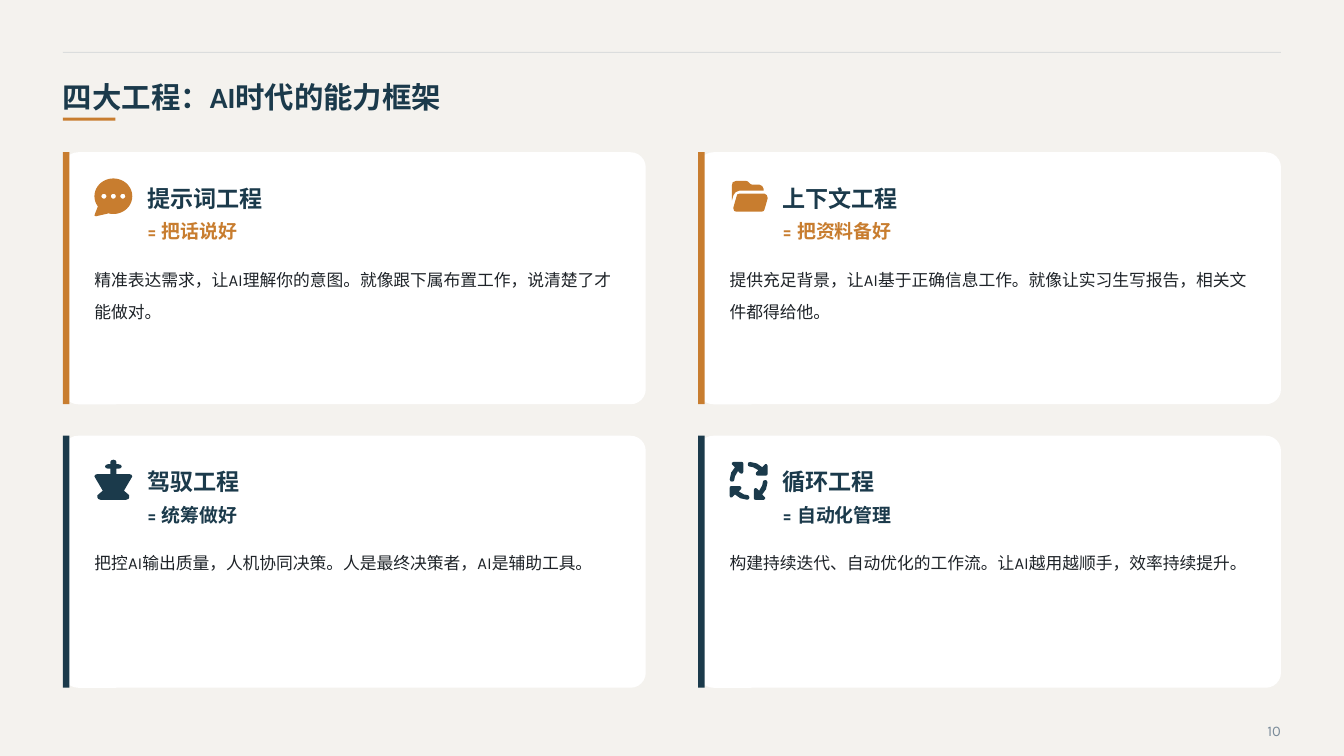
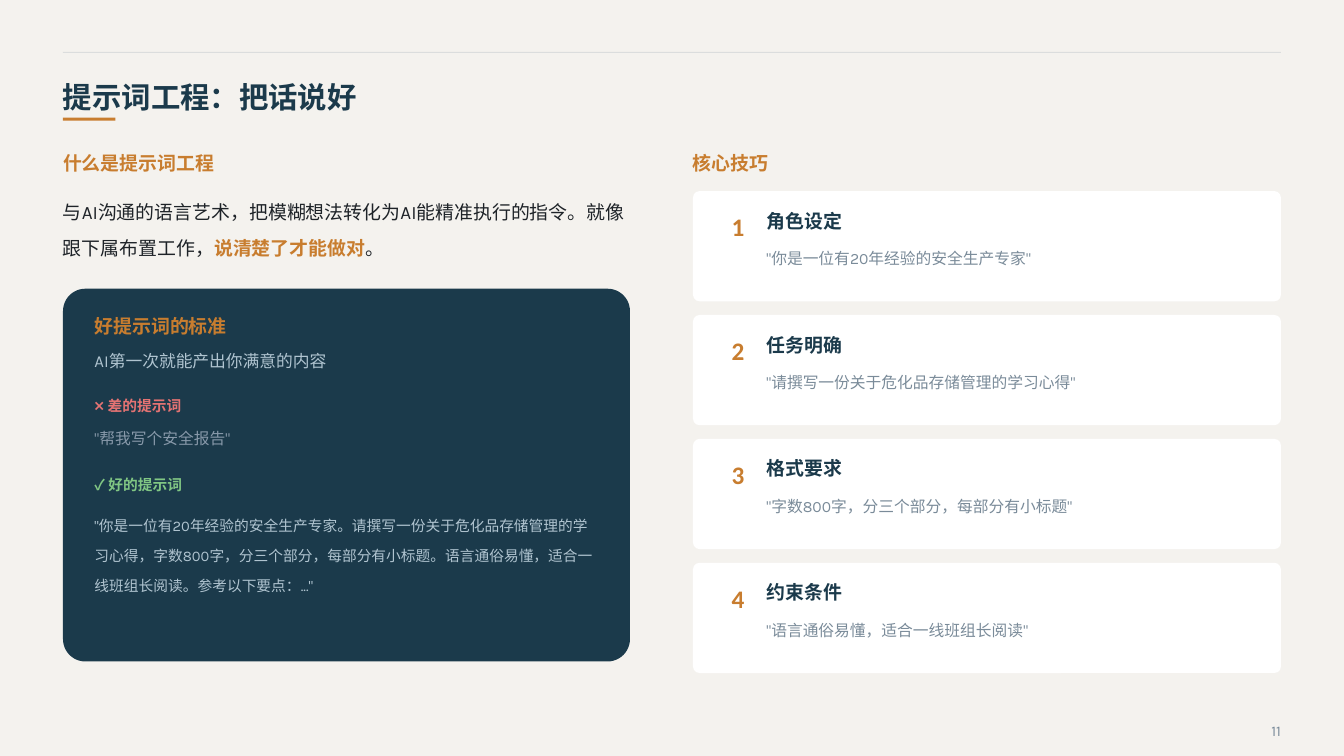
from math import cos, radians, sin

from lxml.etree import SubElement
from pptx import Presentation
from pptx.dml.color import RGBColor
from pptx.enum.shapes import MSO_CONNECTOR, MSO_SHAPE
from pptx.enum.text import MSO_ANCHOR, PP_ALIGN
from pptx.oxml.ns import qn
from pptx.util import Pt

PAPER = RGBColor(0xF4, 0xF2, 0xEE)
WHITE = RGBColor(0xFF, 0xFF, 0xFF)
NAVY = RGBColor(0x1B, 0x3A, 0x4B)
ORANGE = RGBColor(0xC8, 0x7D, 0x2F)
INK = RGBColor(0x1E, 0x23, 0x28)
GRAY = RGBColor(0x7A, 0x8B, 0x99)
PALE_BLUE = RGBColor(0xB0, 0xC4, 0xD0)
DIM_BLUE = RGBColor(0x88, 0x99, 0xAA)
RED = RGBColor(0xE5, 0x73, 0x73)
GREEN = RGBColor(0x81, 0xC7, 0x84)
HEADING = "Calibri"
BODY = "Karla"


def add_text(slide, text, left, top, width, height, size, color, font=BODY, bold=False,
             spacing=1.2, wrap=False, align=PP_ALIGN.LEFT, anchor=MSO_ANCHOR.TOP):
    box = slide.shapes.add_textbox(Pt(left), Pt(top), Pt(width), Pt(height))
    frame = box.text_frame
    frame.margin_left = frame.margin_top = frame.margin_right = frame.margin_bottom = 0
    frame.word_wrap = wrap
    frame.vertical_anchor = anchor
    paragraph = frame.paragraphs[0]
    paragraph.alignment = align
    paragraph.line_spacing = spacing
    paragraph.font.name = font
    paragraph.font.size = Pt(size)
    paragraph.font.bold = bold
    paragraph.font.color.rgb = color
    paragraph.add_run().text = text
    return paragraph


def add_box(slide, left, top, width, height, color, rounded=False):
    kind = MSO_SHAPE.ROUNDED_RECTANGLE if rounded else MSO_SHAPE.RECTANGLE
    shape = slide.shapes.add_shape(kind, Pt(left), Pt(top), Pt(width), Pt(height))
    if rounded:
        shape.adjustments[0] = 0.06
    shape.shadow.inherit = False
    shape.fill.solid()
    shape.fill.fore_color.rgb = color
    shape.line.fill.background()


presentation = Presentation()
presentation.slide_width = Pt(1280)
presentation.slide_height = Pt(720)

slides = []
for number, title in [(10, "四大工程：AI时代的能力框架"), (11, "提示词工程：把话说好")]:
    slide = presentation.slides.add_slide(presentation.slide_layouts[6])
    slide.background.fill.solid()
    slide.background.fill.fore_color.rgb = PAPER
    rule = slide.shapes.add_connector(MSO_CONNECTOR.STRAIGHT, Pt(60), Pt(50), Pt(1220), Pt(50))
    rule.line.color.rgb = GRAY
    rule.line.width = Pt(1)
    rule_color = rule.line.fill._xPr.find(".//" + qn("a:srgbClr"))
    SubElement(rule_color, qn("a:alpha"), val="20000")
    SubElement(rule._element.spPr, qn("a:effectLst"))
    add_text(slide, title, 60, 65, 800, 40, 28, NAVY, HEADING, True, 1.3)
    add_box(slide, 60, 112, 50, 3, ORANGE)
    add_text(slide, str(number), 1160, 680, 60, 24, 14, GRAY, spacing=1.4,
             align=PP_ALIGN.RIGHT, anchor=MSO_ANCHOR.MIDDLE)
    slides.append(slide)
framework_slide, prompt_slide = slides

bubble = [(25 + 25 * cos(radians(a)), 23.5 + 23.5 * sin(radians(a))) for a in range(145, 470, 5)]
bubble += [(2, 50), (0, 49), (1, 46)]
bubble_dots = [[(x + 3.3 * cos(radians(a)), 23.5 + 3.3 * sin(radians(a)))
                for a in range(0, 360, 20)] for x in (12.5, 25, 37.5)]
folder_back = [(5, 22), (3, 29), (3, 9), (4, 5), (9, 3), (21, 3), (24, 4), (27, 7), (29, 8),
               (39, 8), (43, 10), (45, 14), (45, 16), (13, 16), (8, 18)]
folder_front = [(42, 44), (9, 44), (6, 43), (5, 40), (5, 38), (9, 24), (10, 21), (13, 20),
                (46, 20), (49, 22), (50, 25), (50, 27), (46, 41), (45, 43)]
king_half = [(25, -3), (28, -2), (29, 0), (29, 3), (32, 3), (35, 4), (36, 6), (35, 8), (32, 9),
             (29, 9), (29, 16), (46, 16), (49, 17), (50, 19), (49, 21), (39, 38), (46, 44),
             (46, 47), (45, 49), (42, 50)]
king = king_half + [(50 - x, y) for x, y in reversed(king_half)]
cycle_arrows = [[(47, 24), (45, 24.5), (44, 26), (43, 31), (39, 38), (36, 35), (34, 34.5),
                 (32.5, 35.5), (32, 37), (32, 48), (32.5, 49.5), (34, 50), (45, 50), (47, 49),
                 (47, 47), (43, 43), (48, 36), (50, 27), (49, 24.5)]]
for turn in range(3):
    cycle_arrows.append([(50 - y, x) for x, y in cycle_arrows[-1]])

projects = [
    ("提示词工程", "= 把话说好", ORANGE, [bubble] + bubble_dots,
     "精准表达需求，让AI理解你的意图。就像跟下属布置工作，说清楚了才能做对。"),
    ("上下文工程", "= 把资料备好", ORANGE, [folder_back, folder_front],
     "提供充足背景，让AI基于正确信息工作。就像让实习生写报告，相关文件都得给他。"),
    ("驾驭工程", "= 统筹做好", NAVY, [king],
     "把控AI输出质量，人机协同决策。人是最终决策者，AI是辅助工具。"),
    ("循环工程", "= 自动化管理", NAVY, cycle_arrows,
     "构建持续迭代、自动优化的工作流。让AI越用越顺手，效率持续提升。"),
]
for index, (name, motto, color, icon, description) in enumerate(projects):
    left = 60 + 605 * (index % 2)
    top = 145 + 270 * (index // 2)
    add_box(framework_slide, left, top, 555, 240, WHITE, True)
    add_box(framework_slide, left, top, 6, 240, color)

    outlines = [[(100 * x, 100 * y) for x, y in outline] for outline in icon]
    builder = framework_slide.shapes.build_freeform(*outlines[0][0], scale=Pt(36) / 5000)
    for outline in outlines:
        builder.move_to(*outline[0])
        builder.add_line_segments(outline[1:], close=True)
    icon_shape = builder.convert_to_shape(Pt(left + 30), Pt(top + 25))
    icon_shape.shadow.inherit = False
    icon_shape.fill.solid()
    icon_shape.fill.fore_color.rgb = color
    icon_shape.line.fill.background()

    add_text(framework_slide, name, left + 80, top + 25, 300, 32, 22, NAVY, HEADING, True)
    add_text(framework_slide, motto, left + 80, top + 60, 440, 28, 18, color, bold=True)
    add_text(framework_slide, description, left + 30, top + 100, 500, 110, 16, INK,
             spacing=1.6, wrap=True)

for left, heading in [(60, "什么是提示词工程"), (660, "核心技巧")]:
    add_text(prompt_slide, heading, left, 140, 300, 28, 18, ORANGE, HEADING, True)

definition = add_text(
    prompt_slide, "与AI沟通的语言艺术，把模糊想法转化为AI能精准执行的指令。就像跟下属布置工作，",
    60, 178, 540, 80, 18, INK, spacing=1.6, wrap=True)
emphasis = definition.add_run()
emphasis.text = "说清楚了才能做对"
emphasis.font.bold = True
emphasis.font.color.rgb = ORANGE
definition.add_run().text = "。"

add_box(prompt_slide, 60, 275, 540, 355, NAVY, True)
add_text(prompt_slide, "好提示词的标准", 90, 295, 480, 28, 18, ORANGE, HEADING, True)
add_text(prompt_slide, "AI第一次就能产出你满意的内容", 90, 330, 480, 28, 16, PALE_BLUE, wrap=True)
for label, top, color in [("❌ 差的提示词", 375, RED), ("✓ 好的提示词", 450, GREEN)]:
    add_text(prompt_slide, label, 90, top, 100, 24, 14, color, bold=True)
add_text(prompt_slide, '"帮我写个安全报告"', 90, 405, 480, 30, 15, DIM_BLUE, wrap=True)
add_text(prompt_slide,
         '"你是一位有20年经验的安全生产专家。请撰写一份关于危化品存储管理的学习心得，'
         '字数800字，分三个部分，每部分有小标题。语言通俗易懂，适合一线班组长阅读。'
         '参考以下要点：..."',
         90, 480, 480, 130, 14, PALE_BLUE, spacing=1.7, wrap=True)

skills = [
    ("角色设定", '"你是一位有20年经验的安全生产专家"'),
    ("任务明确", '"请撰写一份关于危化品存储管理的学习心得"'),
    ("格式要求", '"字数800字，分三个部分，每部分有小标题"'),
    ("约束条件", '"语言通俗易懂，适合一线班组长阅读"'),
]
for index, (name, example) in enumerate(skills):
    top = 182 + 118 * index
    add_box(prompt_slide, 660, top, 560, 105, WHITE, True)
    add_text(prompt_slide, str(index + 1), 685, top + 13, 36, 36, 24, ORANGE, HEADING, True,
             align=PP_ALIGN.CENTER, anchor=MSO_ANCHOR.MIDDLE)
    add_text(prompt_slide, name, 730, top + 13, 200, 28, 18, NAVY, HEADING, True)
    add_text(prompt_slide, example, 730, top + 46, 460, 42, 15, GRAY, spacing=1.5, wrap=True)

presentation.save("out.pptx")
